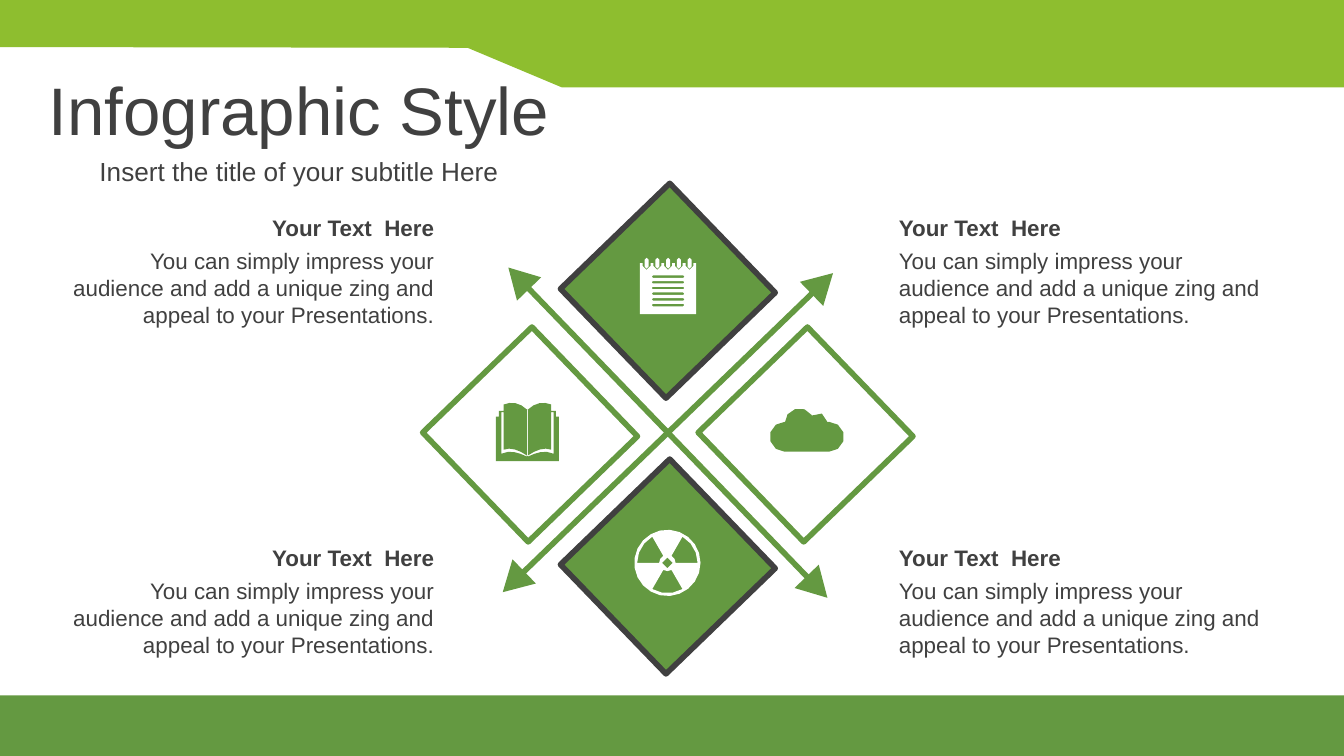
from math import cos, radians, sin

from lxml.etree import SubElement
from pptx import Presentation
from pptx.dml.color import RGBColor
from pptx.enum.shapes import MSO_CONNECTOR, MSO_SHAPE
from pptx.enum.text import MSO_ANCHOR, MSO_AUTO_SIZE, PP_ALIGN
from pptx.oxml.ns import qn
from pptx.util import Pt

GREEN, LIME, DARK, WHITE = "649941", "8EBE2F", "404040", "FFFFFF"
TILT = 46
HEAD = "Your Text  Here"
BODY = ("You can simply impress your audience and add a unique zing "
        "and appeal to your Presentations.")


def tint(fmt, code):
    """Give a fill a solid colour."""
    fmt.solid()
    fmt.fore_color.rgb = RGBColor.from_string(code)


def paint(shape, fill, line=None, width=3):
    shape.shadow.inherit = False
    tint(shape.fill, fill)
    if line:
        tint(shape.line.fill, line)
        shape.line.width = Pt(width)
    else:
        shape.line.fill.background()


def place(shape, box):
    for name, value in zip(("left", "top", "width", "height"), box):
        setattr(shape, name, Pt(value))


def put(slide, kind, mid, size, turn, fill, line=None):
    """Add a turned preset shape centred on mid."""
    (x, y), (w, h) = mid, size
    shape = slide.shapes.add_shape(
        kind, Pt(x - w / 2), Pt(y - h / 2), Pt(w), Pt(h))
    shape.rotation = turn
    paint(shape, fill, line)


def trace(slide, left, top, paths, fill):
    """Add one freeform of closed paths; inner paths cut holes."""
    pts = [[(Pt(left + x), Pt(top + y)) for x, y in path] for path in paths]
    pen = slide.shapes.build_freeform(*pts[0][0], scale=1.0)
    pen.add_line_segments(pts[0][1:], close=True)
    for path in pts[1:]:
        pen.move_to(*path[0])
        pen.add_line_segments(path[1:], close=True)
    paint(pen.convert_to_shape(), fill)


def arc(x, y, r, start, end):
    """Sample an arc, with fewer points for a smaller one."""
    count = max(2, round(abs(end - start) * r / 300))
    turns = [radians(start + (end - start) * i / count)
             for i in range(count + 1)]
    return [(x + r * cos(a), y + r * sin(a)) for a in turns]


def curve(a, b, c, d, steps=4):
    """Sample a cubic curve from a to d."""
    path = []
    for i in range(steps + 1):
        t = i / steps
        mix = ((1 - t) ** 3, 3 * t * (1 - t) ** 2, 3 * t * t * (1 - t), t ** 3)
        path.append(tuple(sum(m * p[k] for m, p in zip(mix, (a, b, c, d)))
                          for k in (0, 1)))
    return path


def rect(x, y, w, h):
    return [(x, y), (x + w, y), (x + w, y + h), (x, y + h)]


def book(slide, left, top):
    wide = 33.8

    def flip(path):
        return [(wide - x, y) for x, y in reversed(path)]

    half = [(0, 31.3), (0, 7.4), (1.6, 7.4), (1.6, 4.4), (4.2, 4.4),
            *curve((4.2, 0.9), (8.2, -0.8), (13, 0), (16.6, 3.6))]
    gap = [(2.9, 5), (4.2, 5),
           *curve((4.2, 25.1), (7.9, 23.7), (12.2, 25.2), (16.6, 28.2)),
           *curve((16.6, 28.8), (11.5, 26.5), (7.9, 25.2), (2.9, 27.3))]
    slit = rect(16.6, 3.6, 0.6, 25)
    trace(slide, left, top, [half + flip(half), gap, flip(gap), slit], GREEN)


def cloud(slide, left, top):
    edge = (arc(8, 15.2, 8, 90, 270) + arc(15.9, 7.9, 7.9, 180, 327)
            + arc(26, 7.4, 5, 225, 360) + arc(31.8, 15.2, 8, 270, 450))
    trace(slide, left, top, [edge], GREEN)


def pad(slide, left, top):
    side, rim, step = 30.2, 2.9, 5.76
    edge, rings = [(0, rim)], []
    for i in range(5):
        x = 3.6 + i * step
        edge += [(x - 2.1, rim), *arc(x, 4.4, 2.1, 180, 0), (x + 2.1, rim)]
        rings.append(arc(x, 1.1, 1.1, 180, 360) + arc(x, 4.7, 1.1, 0, 180))
    edge += [(side, rim), (side, side), (0, side)]
    rows = [arc(7, 10.1 + i * 3.05, 0.65, 90, 270)
            + arc(23.2, 10.1 + i * 3.05, 0.65, 270, 450) for i in range(6)]
    trace(slide, left, top, [edge, *rings, *rows], WHITE)


def fan(slide, left, top):
    r = 17.75
    blades = [arc(r, r, 16.2, a, a + 60) + arc(r, r, 4.4, a + 60, a)
              for a in (60, 180, 300)]
    hub = arc(r, r, 2.9, 0, 180) + arc(r, r, 2.9, 180, 360)
    trace(slide, left, top, [arc(r, r, r, 0, 360), *blades, hub], WHITE)


def write(shape, text, box, size, align, bold=False):
    place(shape, box)
    frame = shape.text_frame
    frame.text = text
    para = frame.paragraphs[0]
    looks = (
        (frame, {"word_wrap": True, "auto_size": MSO_AUTO_SIZE.NONE,
                 "vertical_anchor": MSO_ANCHOR.MIDDLE}),
        (para, {"alignment": align}),
        (para.runs[0].font, {"name": "Arial", "size": Pt(size),
                             "bold": bold}),
    )
    for item, values in looks:
        for name, value in values.items():
            setattr(item, name, value)
    tint(para.runs[0].font.fill, DARK)


def bands(slide, wide, high):
    top = [(0, 0), (wide, 0), (wide, 46.8), (301, 46.8), (250.5, 25.6),
           (0, 25.2)]
    trace(slide, 0, 0, [top], LIME)
    put(slide, MSO_SHAPE.RECTANGLE, (wide / 2, high - 16.25), (wide, 32.5), 0,
        GREEN)


def titles(slide, left, top, wide):
    write(slide.shapes.title, "Infographic Style", (left, top, wide, 45.4),
          36, PP_ALIGN.CENTER)
    write(slide.placeholders[1], "Insert the title of your subtitle Here",
          (left, top + 45.4, wide, 22.3), 14, PP_ALIGN.CENTER)


def arrow(slide, x, y, turn):
    """Draw a two-headed arrow through x, y."""
    def spot(a, r):
        return x + r * sin(radians(a)), y - r * cos(radians(a))

    ends = [Pt(v) for a in (turn, turn + 180) for v in spot(a, 108)]
    bar = slide.shapes.add_connector(MSO_CONNECTOR.STRAIGHT, *ends)
    tint(bar.line.fill, GREEN)
    bar.line.width = Pt(3)
    SubElement(bar._element.spPr, qn("a:effectLst"))
    for a in (turn, turn + 180):
        put(slide, MSO_SHAPE.ISOSCELES_TRIANGLE, spot(a, 115), (18, 16), a,
            GREEN)


def cross(slide, x, y):
    """Draw four diamonds round x, y, with arrows between them."""
    for dx, dy, fill, line in ((0, -76, GREEN, DARK), (73.8, 1, WHITE, GREEN),
                               (-73.8, 1, WHITE, GREEN),
                               (0, 71.7, GREEN, DARK)):
        put(slide, MSO_SHAPE.RECTANGLE, (x + dx, y + dy), (81.4, 81.4), TILT,
            fill, line)
    for turn in (TILT, TILT + 90):
        arrow(slide, x, y, turn)
    for draw, dx, dy in ((book, -92.1, -16), (cloud, 54.6, -13),
                         (pad, -15, -93.7), (fan, -18, 52)):
        draw(slide, x + dx, y + dy)


def note(slide, left, top, align):
    for text, down, high, bold in ((HEAD, 0, 21.6, True),
                                   (BODY, 17.2, 51.4, False)):
        box = slide.shapes.add_textbox(0, 0, 0, 0)
        write(box, text, (left, top + down, 208.8, high), 12, align, bold)


def main():
    deck = Presentation()
    deck.slide_width, deck.slide_height = Pt(720), Pt(405)
    slide = deck.slides.add_slide(deck.slide_layouts[0])
    bands(slide, 720, 405)
    titles(slide, 0, 35.3, 320.4)
    cross(slide, 357.8, 231.8)
    for left, align in ((31, PP_ALIGN.RIGHT), (474.5, PP_ALIGN.LEFT)):
        for top in (111, 287.8):
            note(slide, left, top, align)
    deck.save("out.pptx")


if __name__ == "__main__":
    main()
